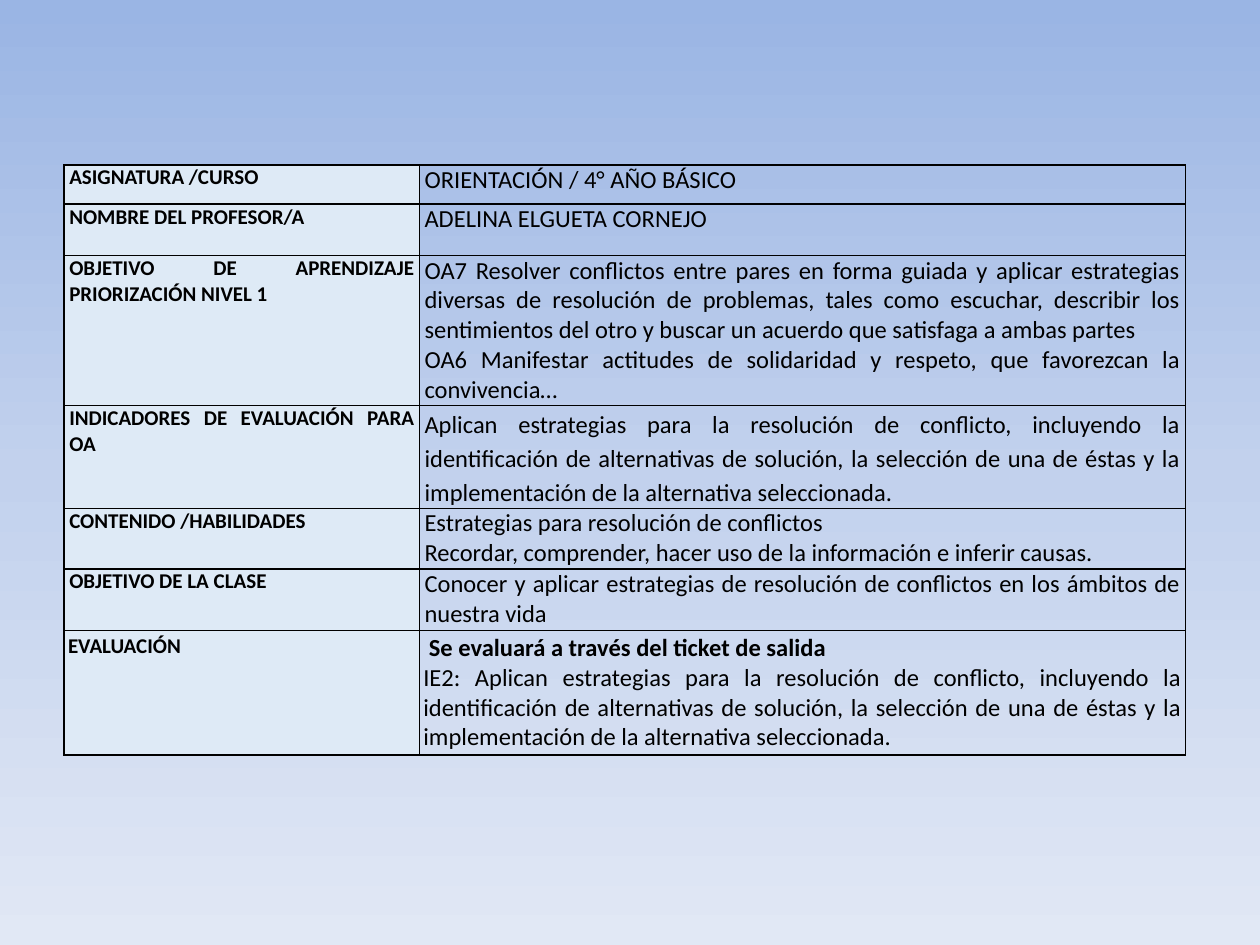
from copy import deepcopy

from lxml.etree import SubElement
from pptx import Presentation
from pptx.dml.color import RGBColor
from pptx.enum.text import PP_ALIGN
from pptx.oxml.ns import qn
from pptx.util import Inches, Pt

BLACK = RGBColor(0x00, 0x00, 0x00)
LABEL_FILL = RGBColor(0xDE, 0xEA, 0xF6)
SKY = [(0, RGBColor(0x9A, 0xB5, 0xE4)),
       (0.5, RGBColor(0xC2, 0xD1, 0xED)),
       (1, RGBColor(0xE1, 0xE8, 0xF5))]

# Column widths and row heights of the grid, in inches
COLUMNS = [2.82, 6.08]
ROWS = [0.31, 0.41, 1.19, 0.81, 0.48, 0.49, 0.98]

LESSON = [
    ("ASIGNATURA /CURSO", ["ORIENTACIÓN / 4° AÑO BÁSICO"]),
    ("NOMBRE DEL PROFESOR/A", ["ADELINA ELGUETA CORNEJO"]),
    ("OBJETIVO DE APRENDIZAJE PRIORIZACIÓN NIVEL 1", [
        "OA7 Resolver conflictos entre pares en forma guiada y aplicar estrategias "
        "diversas de resolución de problemas, tales como escuchar, describir los "
        "sentimientos del otro y buscar un acuerdo que satisfaga a ambas partes",
        "OA6 Manifestar actitudes de solidaridad y respeto, que favorezcan la "
        "convivencia…"]),
    ("INDICADORES DE EVALUACIÓN PARA OA", [
        "Aplican estrategias para la resolución de conflicto, incluyendo la "
        "identificación de alternativas de solución, la selección de una de éstas y "
        "la implementación de la alternativa seleccionada."]),
    ("CONTENIDO /HABILIDADES", [
        "Estrategias para resolución de conflictos",
        "Recordar, comprender, hacer uso de la información e inferir causas."]),
    ("OBJETIVO DE LA CLASE", [
        "Conocer y aplicar estrategias de resolución de conflictos en los ámbitos de "
        "nuestra vida"]),
    ("EVALUACIÓN", [
        " Se evaluará a través del ticket de salida",
        "IE2: Aplican estrategias para la resolución de conflicto, incluyendo la "
        "identificación de alternativas de solución, la selección de una de éstas y "
        "la implementación de la alternativa seleccionada."]),
]
INDICATORS, EVALUATION = 3, 6


def add_borders(cell):
    tcPr = cell._tc.get_or_add_tcPr()
    for position, side in enumerate(("a:lnL", "a:lnR", "a:lnT", "a:lnB")):
        line = SubElement(tcPr, qn(side), w=str(Pt(1)))
        fill = SubElement(line, qn("a:solidFill"))
        SubElement(fill, qn("a:srgbClr"), val=str(BLACK))
        tcPr.insert(position, line)


prs = Presentation()
prs.slide_width, prs.slide_height = Inches(10), Inches(7.5)
s = prs.slides.add_slide(prs.slide_layouts[6])

# Background: three-stop gradient from top to bottom
sky = s.background.fill
sky.gradient()
sky.gradient_angle = 270
stop_list = s.element.find(".//" + qn("a:gsLst"))
stop_list.append(deepcopy(stop_list[-1]))
for stop, (position, color) in zip(sky.gradient_stops, SKY):
    stop.position = position
    stop.color.rgb = color

# Lesson table
table = s.shapes.add_table(
    len(ROWS), len(COLUMNS), Inches(0.51), Inches(1.31),
    Inches(sum(COLUMNS)), Inches(sum(ROWS))).table
table.first_row = table.horz_banding = False
for column, width in zip(table.columns, COLUMNS):
    column.width = Inches(width)
for row, height in zip(table.rows, ROWS):
    row.height = Inches(height)

# Labels on the left, contents on the right
for i, (label, contents) in enumerate(LESSON):
    side, top = (0.03, 0.02) if i == EVALUATION else (0.04, 0)
    margins = {"margin_left": side, "margin_right": side,
               "margin_top": top, "margin_bottom": top}
    for j, paragraphs in enumerate(([label], contents)):
        cell = table.cell(i, j)
        for name, value in margins.items():
            setattr(cell, name, Inches(value))
        if j == 0:
            cell.fill.solid()
            cell.fill.fore_color.rgb = LABEL_FILL
        else:
            cell.fill.background()
        add_borders(cell)

        tf = cell.text_frame
        for k, text in enumerate(paragraphs):
            p = tf.add_paragraph() if k else tf.paragraphs[0]
            p.alignment = PP_ALIGN.JUSTIFY
            if i == INDICATORS and j == 1:
                p.line_spacing = 1.15
            r = p.add_run()
            r.text = text
            bold = j == 0 or (i == EVALUATION and k == 0)
            font = {"name": "Calibri", "size": Pt(14 if j else 12), "bold": bold}
            for name, value in font.items():
                setattr(r.font, name, value)
            r.font.color.rgb = BLACK

prs.save("out.pptx")
